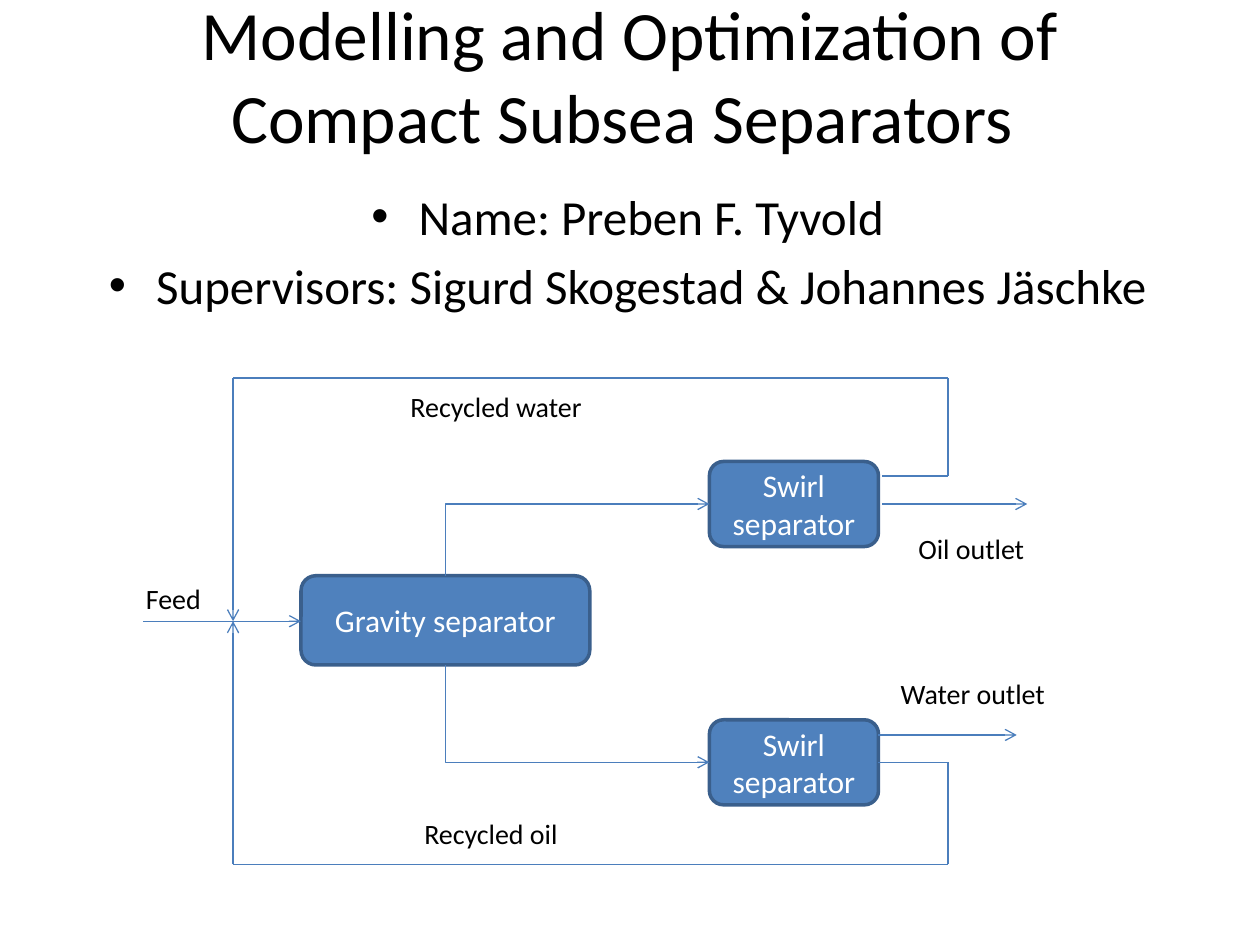
from dataclasses import dataclass

from lxml.etree import SubElement
from pptx import Presentation
from pptx.dml.color import RGBColor
from pptx.enum.shapes import MSO_CONNECTOR, MSO_SHAPE
from pptx.enum.text import MSO_ANCHOR, PP_ALIGN
from pptx.oxml.ns import qn
from pptx.util import Pt


@dataclass(frozen=True)
class Theme:
    font: str = "Calibri"
    ink: RGBColor = RGBColor(0x00, 0x00, 0x00)
    unit_text: RGBColor = RGBColor(0xFF, 0xFF, 0xFF)
    unit_fill: RGBColor = RGBColor(0x4F, 0x81, 0xBD)
    unit_edge: RGBColor = RGBColor(0x3A, 0x5F, 0x8C)
    pipe: RGBColor = RGBColor(0x4B, 0x7E, 0xBC)
    title_size: float = 39.6
    body_size: float = 28
    unit_size: float = 18
    label_size: float = 16


THEME = Theme()

FEED_Y = 355
RECYCLE_X = 133.2
RETURN_X = 541.8
RETURN_TOP, RETURN_BOTTOM = 216, 494
GRAVITY = (172, 329, 165, 51)
SWIRL_X, SWIRL_WIDTH, SWIRL_HEIGHT = 405.4, 96.6, 48.6
SWIRL_CENTRES = (288, 435.6)


def write(frame, lines, size, color=THEME.ink, align=PP_ALIGN.LEFT,
          anchor=MSO_ANCHOR.TOP, wrap=True, bullet=False, gap=0):
    frame.word_wrap = wrap
    frame.vertical_anchor = anchor
    for index, line in enumerate(lines):
        para = frame.paragraphs[0] if index == 0 else frame.add_paragraph()
        para.alignment = align
        if index:
            para.space_before = Pt(gap)
        if bullet:
            add_bullet(para)
        span = para.add_run()
        span.text = line
        span.font.name = THEME.font
        span.font.size = Pt(size)
        span.font.color.rgb = color


def add_bullet(para):
    properties = para._p.get_or_add_pPr()
    properties.set("marL", str(Pt(27)))
    properties.set("indent", str(Pt(-27)))
    SubElement(properties, qn("a:buFont")).set("typeface", "Arial")
    SubElement(properties, qn("a:buChar")).set("char", "•")


def add_text(page, lines, left, top, width, height, **text_format):
    box = page.shapes.add_textbox(Pt(left), Pt(top), Pt(width), Pt(height))
    write(box.text_frame, lines, **text_format)
    return box


def add_unit(page, name, left, top, width, height):
    """Draw one separator."""
    unit = page.shapes.add_shape(MSO_SHAPE.ROUNDED_RECTANGLE,
                                 Pt(left), Pt(top), Pt(width), Pt(height))
    unit.shadow.inherit = False
    unit.fill.solid()
    unit.fill.fore_color.rgb = THEME.unit_fill
    unit.line.color.rgb = THEME.unit_edge
    unit.line.width = Pt(2)
    write(unit.text_frame, [name], THEME.unit_size, THEME.unit_text,
          PP_ALIGN.CENTER, MSO_ANCHOR.MIDDLE)


def add_pipe(page, start, end, arrow=None, kind=MSO_CONNECTOR.STRAIGHT):
    """Connect two points; arrow is None, "headEnd" (start) or "tailEnd" (end)."""
    pipe = page.shapes.add_connector(kind, *map(Pt, start + end))
    pipe.line.color.rgb = THEME.pipe
    pipe.line.width = Pt(0.75)
    if arrow:
        SubElement(pipe.line._get_or_add_ln(), qn(f"a:{arrow}")).set("type", "arrow")
    properties = pipe._element.spPr
    SubElement(properties, qn("a:effectLst"))
    return pipe


def add_corner_pipe(page, inlet, source):
    """Run from the inlet level to the source column, with the arrow at the inlet."""
    pipe = add_pipe(page, inlet, source, "headEnd", MSO_CONNECTOR.ELBOW)
    pipe._element.spPr.find(qn("a:prstGeom")).set("prst", "bentConnector2")


def add_heading(page):
    title = add_text(page, ["Modelling and Optimization of Compact Subsea Separators "],
                     36, 21.6, 648, 90, size=THEME.title_size,
                     align=PP_ALIGN.CENTER, anchor=MSO_ANCHOR.MIDDLE)
    title.text_frame.margin_bottom = Pt(52)
    add_text(page, ["Name: Preben F. Tyvold",
                    "Supervisors: Sigurd Skogestad & Johannes Jäschke"],
             34.6, 103, 648, 356.4, size=THEME.body_size,
             align=PP_ALIGN.CENTER, bullet=True, gap=5.6)


def add_separators(page):
    add_unit(page, "Gravity separator", *GRAVITY)
    left, top, width, height = GRAVITY
    for centre, source_y in zip(SWIRL_CENTRES, (top, top + height)):
        add_unit(page, "Swirl separator", SWIRL_X, centre - SWIRL_HEIGHT / 2,
                 SWIRL_WIDTH, SWIRL_HEIGHT)
        add_corner_pipe(page, (SWIRL_X, centre), (left + width / 2, source_y))


def add_streams(page):
    upper, lower = SWIRL_CENTRES
    # start x, return level, outlet level, outlet end x, loop level
    streams = [(504, upper - 16, upper, 587, RETURN_TOP),
               (502, lower, lower - 15.6, 581, RETURN_BOTTOM)]
    for start_x, return_y, outlet_y, outlet_x, loop_y in streams:
        add_pipe(page, (start_x, outlet_y), (outlet_x, outlet_y), "tailEnd")
        add_pipe(page, (start_x, return_y), (RETURN_X, return_y))
        add_pipe(page, (RETURN_X, return_y), (RETURN_X, loop_y))
        add_pipe(page, (RETURN_X, loop_y), (RECYCLE_X, loop_y))
        add_pipe(page, (RECYCLE_X, loop_y), (RECYCLE_X, FEED_Y), "tailEnd")
    add_pipe(page, (82, FEED_Y), (GRAVITY[0], FEED_Y), "tailEnd")


def add_labels(page):
    labels = [("Water outlet", 507.6, 383, 137.5, True),
              ("Oil outlet", 517.7, 300.2, 75.6, False),
              ("Recycled water", 227.5, 219, 153.4, True),
              ("Recycled oil", 235.4, 463, 91.4, False),
              ("Feed", 76.3, 329, 50.4, True)]
    for name, left, top, width, wrap in labels:
        add_text(page, [name], left, top, width, 26.6,
                 size=THEME.label_size, wrap=wrap)


def main():
    deck = Presentation()
    deck.slide_width, deck.slide_height = Pt(720), Pt(540)
    page = deck.slides.add_slide(deck.slide_layouts[6])
    add_heading(page)
    add_separators(page)
    add_streams(page)
    add_labels(page)
    deck.save("out.pptx")


if __name__ == "__main__":
    main()
